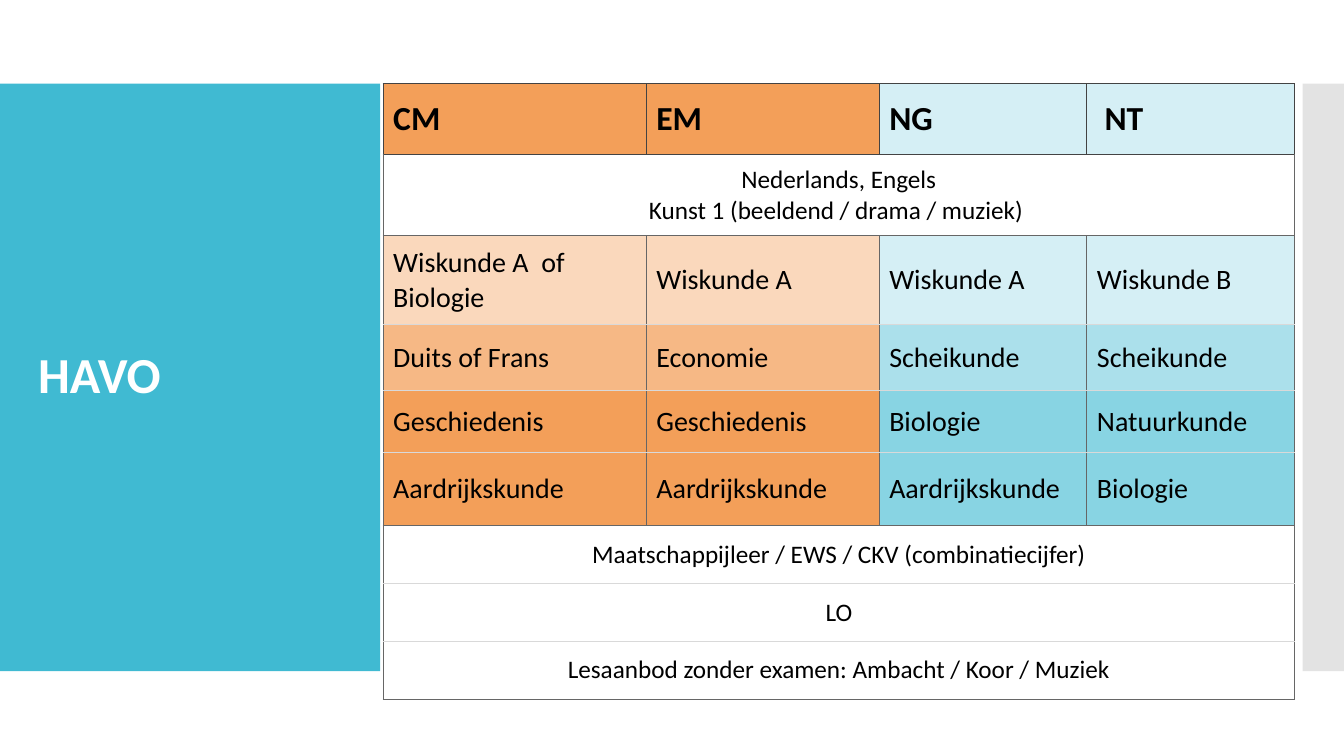
from dataclasses import dataclass

from lxml.etree import SubElement
from pptx import Presentation
from pptx.dml.color import RGBColor
from pptx.dml.fill import FillFormat
from pptx.enum.shapes import MSO_SHAPE
from pptx.enum.text import MSO_ANCHOR, PP_ALIGN
from pptx.oxml.ns import qn
from pptx.slide import Slide
from pptx.table import Table, _Cell
from pptx.text.text import TextFrame
from pptx.util import Emu, Pt

FONT = "Calibri"
TEAL = RGBColor(0x40, 0xBA, 0xD2)
ORANGE = RGBColor(0xEE, 0x70, 0x08)
SILVER = RGBColor(0xC8, 0xC8, 0xC8)
WHITE = RGBColor(0xFF, 0xFF, 0xFF)
BLACK = RGBColor(0x00, 0x00, 0x00)
DARK = RGBColor(0x43, 0x43, 0x43)
GREY = RGBColor(0x66, 0x66, 0x66)
PALE = RGBColor(0xD9, 0xD9, 0xD9)


@dataclass(frozen=True)
class Panel:
    left: int
    width: int
    color: RGBColor
    alpha: int


@dataclass(frozen=True)
class Row:
    height: int
    size: int
    texts: tuple[str, ...]
    alphas: tuple[int, int] = (100, 100)
    top: RGBColor = PALE
    bottom: RGBColor = PALE
    side: RGBColor = GREY


PANELS = (Panel(0, 377, TEAL, 100), Panel(1292, 42, SILVER, 50))
WIDTHS = (261, 231, 206, 206)
HUES = (ORANGE, ORANGE, TEAL, TEAL)
ROWS = (
    Row(70, 24, ("CM", "EM", "NG", " NT"), (67, 22), DARK, DARK, DARK),
    Row(60, 18, ("Nederlands, Engels\nKunst 1 (beeldend / drama / muziek) ",),
        top=DARK, bottom=GREY),
    Row(62, 20, ("Wiskunde A  of\nBiologie", "Wiskunde A", "Wiskunde A", "Wiskunde B"),
        (27, 22), top=GREY),
    Row(65, 20, ("Duits of Frans", "Economie", "Scheikunde", "Scheikunde"), (49, 44)),
    Row(62, 20, ("Geschiedenis", "Geschiedenis", "Biologie", "Natuurkunde"), (67, 62)),
    Row(72, 20, ("Aardrijkskunde", "Aardrijkskunde", "Aardrijkskunde", "Biologie"),
        (67, 62), bottom=GREY),
    Row(58, 18, ("Maatschappijleer / EWS / CKV (combinatiecijfer)",), top=GREY),
    Row(57, 18, ("LO",)),
    Row(58, 18, ("Lesaanbod zonder examen: Ambacht / Koor / Muziek",), bottom=GREY),
)


def px(count: int) -> Emu:
    return Emu(count * 9144)


def paint(fill: FillFormat, owner, color: RGBColor, alpha: int) -> None:
    fill.solid()
    fill.fore_color.rgb = color
    if alpha < 100:
        tone = owner.find(qn("a:solidFill")).find(qn("a:srgbClr"))
        SubElement(tone, qn("a:alpha"), val=str(alpha * 1000))


def write(frame: TextFrame, text: str, size: int, color: RGBColor,
          bold: bool, align: PP_ALIGN) -> None:
    frame.text = text
    frame.word_wrap = True
    for para in frame.paragraphs:
        para.alignment = align
        for run in para.runs:
            run.font.name = FONT
            run.font.size = Pt(size)
            run.font.bold = bold
            run.font.color.rgb = color


def border(cell: _Cell, row: Row) -> None:
    props = cell._tc.get_or_add_tcPr()
    edges = {"L": row.side, "R": row.side, "T": row.top, "B": row.bottom}
    for edge, color in edges.items():
        line = SubElement(props, qn(f"a:ln{edge}"), w=str(Pt(0.75)))
        fill = SubElement(line, qn("a:solidFill"))
        SubElement(fill, qn("a:srgbClr"), val=str(color))


def draw_panel(slide: Slide, panel: Panel) -> None:
    shape = slide.shapes.add_shape(
        MSO_SHAPE.RECTANGLE, px(panel.left), px(83), px(panel.width), px(583))
    shape.shadow.inherit = False
    shape.line.fill.background()
    paint(shape.fill, shape._element.spPr, panel.color, panel.alpha)


def draw_row(table: Table, index: int, row: Row) -> None:
    table.rows[index].height = px(row.height)
    cells = list(table.rows[index].cells)
    wide = len(row.texts) == 1
    for col, cell in enumerate(cells):
        border(cell, row)
        if wide:
            paint(cell.fill, cell._tc.tcPr, WHITE, 100)
        else:
            paint(cell.fill, cell._tc.tcPr, HUES[col], row.alphas[col // 2])
    if wide:
        cells[0].merge(cells[-1])
    align = PP_ALIGN.CENTER if wide else PP_ALIGN.LEFT
    for cell, text in zip(cells, row.texts):
        cell.vertical_anchor = MSO_ANCHOR.MIDDLE
        cell.margin_left = cell.margin_right = px(10)
        cell.margin_top = cell.margin_bottom = px(10)
        write(cell.text_frame, text, row.size, BLACK, index == 0, align)


def draw_table(slide: Slide) -> None:
    table = slide.shapes.add_table(
        len(ROWS), len(WIDTHS), px(380), px(83), px(sum(WIDTHS)),
        px(sum(row.height for row in ROWS))).table
    table.first_row = False
    table.horz_banding = False
    for col, width in zip(table.columns, WIDTHS):
        col.width = px(width)
    for index, row in enumerate(ROWS):
        draw_row(table, index, row)


def draw_title(slide: Slide) -> None:
    frame = slide.shapes.add_textbox(px(28), px(123), px(322), px(503)).text_frame
    frame.vertical_anchor = MSO_ANCHOR.MIDDLE
    write(frame, "HAVO", 36, WHITE, True, PP_ALIGN.LEFT)
    frame.paragraphs[0].line_spacing = 0.9


def main() -> None:
    deck = Presentation()
    deck.slide_width = px(1333)
    deck.slide_height = px(750)
    slide = deck.slides.add_slide(deck.slide_layouts[6])
    for panel in PANELS:
        draw_panel(slide, panel)
    draw_table(slide)
    draw_title(slide)
    deck.save("out.pptx")


if __name__ == "__main__":
    main()
